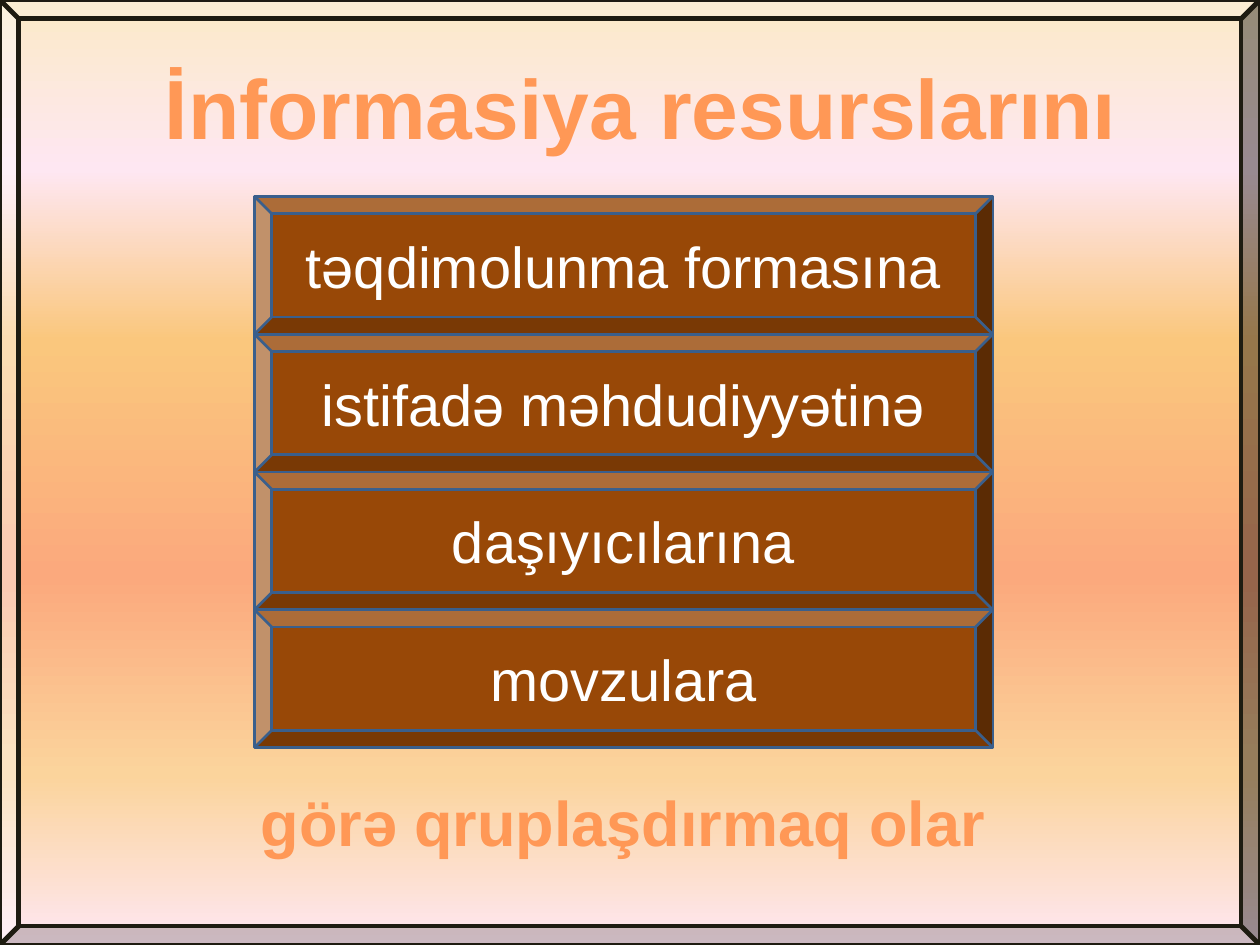
"""Build a framed slide that lists four ways of grouping information resources."""

from dataclasses import dataclass

from lxml.etree import SubElement
from pptx import Presentation
from pptx.dml.color import RGBColor as Rgb
from pptx.dml.fill import FillFormat
from pptx.enum.shapes import MSO_SHAPE as Shape
from pptx.enum.text import MSO_ANCHOR as Anchor, MSO_AUTO_SIZE as AutoSize, PP_ALIGN as Align
from pptx.oxml.ns import qn
from pptx.util import Inches, Pt

WIDTH, HEIGHT = Inches(10), Inches(7.5)
Stops = tuple[tuple[int, str], ...]


@dataclass(frozen=True)
class Theme:
    font: str = "Arial"
    sunset: Stops = ((0, "FBEAC7"), (18, "FEE7F2"), (36, "FAC77D"),
                     (61, "FBA97D"), (82, "FBD49C"), (100, "FEE7F2"))
    ember: Stops = ((0, "9D4700"), (78, "FF9856"), (100, "FFF5F1"))
    frame_line: str = "1E1C11"
    panel_fill: str = "984807"
    panel_line: str = "3A5F8C"
    panel_text: str = "FFFFFF"
    text_line: str = "000000"
    title_size: int = 48
    closing_size: int = 36
    panel_size: int = 33


@dataclass(frozen=True)
class Area:
    """Left, top, width and height as shares of the slide."""

    left: float
    top: float
    width: float
    height: float

    def lengths(self) -> tuple[int, int, int, int]:
        return (int(self.left * WIDTH), int(self.top * HEIGHT),
                int(self.width * WIDTH), int(self.height * HEIGHT))


@dataclass(frozen=True)
class Heading:
    text: str
    area: Area
    size: int
    wrap: bool
    align: Align


THEME = Theme()
FRAME = Area(0, 0, 1, 1)
STACK = Area(0.202, 0.208, 0.586, 0.583)
PANELS = ("təqdimolunma formasına", "istifadə məhdudiyyətinə", "daşıyıcılarına", "movzulara")
HEADINGS = (
    Heading("İnformasiya resurslarını", Area(0.121, 0.052, 0.784, 0.121),
            THEME.title_size, False, Align.LEFT),
    Heading("görə qruplaşdırmaq olar", Area(-0.017, 0.823, 1.023, 0.095),
            THEME.closing_size, True, Align.CENTER),
)


def fill_downward(fill: FillFormat, element, stops: Stops) -> None:
    """Fill with a top-to-bottom gradient held by the given element."""
    fill.gradient()
    fill.gradient_angle = 270
    stop_list = element.find(".//" + qn("a:gsLst"))
    for stop in list(stop_list):
        stop_list.remove(stop)
    for position, color in stops:
        stop = SubElement(stop_list, qn("a:gs"), pos=str(position * 1000))
        SubElement(stop, qn("a:srgbClr"), val=color)


def outline_text(span, color: str, width: float) -> None:
    """Draw a thin line around the letters of a run."""
    properties = span.font._element
    line = SubElement(properties, qn("a:ln"), w=str(Pt(width)))
    SubElement(SubElement(line, qn("a:solidFill")), qn("a:srgbClr"), val=color)
    properties.insert(0, line)


def write(box, text: str, size: int, align: Align):
    """Write one aligned paragraph and return its run."""
    box.text_frame.text = text
    para = box.text_frame.paragraphs[0]
    para.alignment = align
    span = para.runs[0]
    span.font.name, span.font.size = THEME.font, Pt(size)
    return span


def add_bevel(page, area: Area, line: str, width: float):
    """Add an unshadowed bevel with the given line."""
    box = page.shapes.add_shape(Shape.BEVEL, *area.lengths())
    box.shadow.inherit = False
    box.line.color.rgb = Rgb.from_string(line)
    box.line.width = Pt(width)
    return box


def add_frame(page) -> None:
    """Add the thin bevel around the whole slide."""
    box = add_bevel(page, FRAME, THEME.frame_line, 2.75)
    box.adjustments[0] = 0.02
    fill_downward(box.fill, box._element, THEME.sunset)


def add_panel(page, row: int, text: str) -> None:
    """Add one row of the panel stack."""
    height = STACK.height / len(PANELS)
    area = Area(STACK.left, STACK.top + row * height, STACK.width, height)
    box = add_bevel(page, area, THEME.panel_line, 1.5)
    box.fill.solid()
    box.fill.fore_color.rgb = Rgb.from_string(THEME.panel_fill)
    box.text_frame.vertical_anchor = Anchor.MIDDLE
    span = write(box, text, THEME.panel_size, Align.CENTER)
    span.font.color.rgb = Rgb.from_string(THEME.panel_text)


def add_heading(page, heading: Heading) -> None:
    """Add a bold line of text with a gradient fill."""
    box = page.shapes.add_textbox(*heading.area.lengths())
    box.text_frame.word_wrap = heading.wrap
    box.text_frame.auto_size = AutoSize.SHAPE_TO_FIT_TEXT
    span = write(box, heading.text, heading.size, heading.align)
    span.font.bold = True
    fill_downward(span.font.fill, span.font._element, THEME.ember)
    outline_text(span, THEME.text_line, 0.15)


def main() -> None:
    """Build and save the deck."""
    deck = Presentation()
    deck.slide_width, deck.slide_height = WIDTH, HEIGHT
    page = deck.slides.add_slide(deck.slide_layouts[6])
    fill_downward(page.background.fill, page._element, THEME.sunset)
    add_frame(page)
    for row, text in enumerate(PANELS):
        add_panel(page, row, text)
    for heading in HEADINGS:
        add_heading(page, heading)
    deck.save("out.pptx")


if __name__ == "__main__":
    main()
